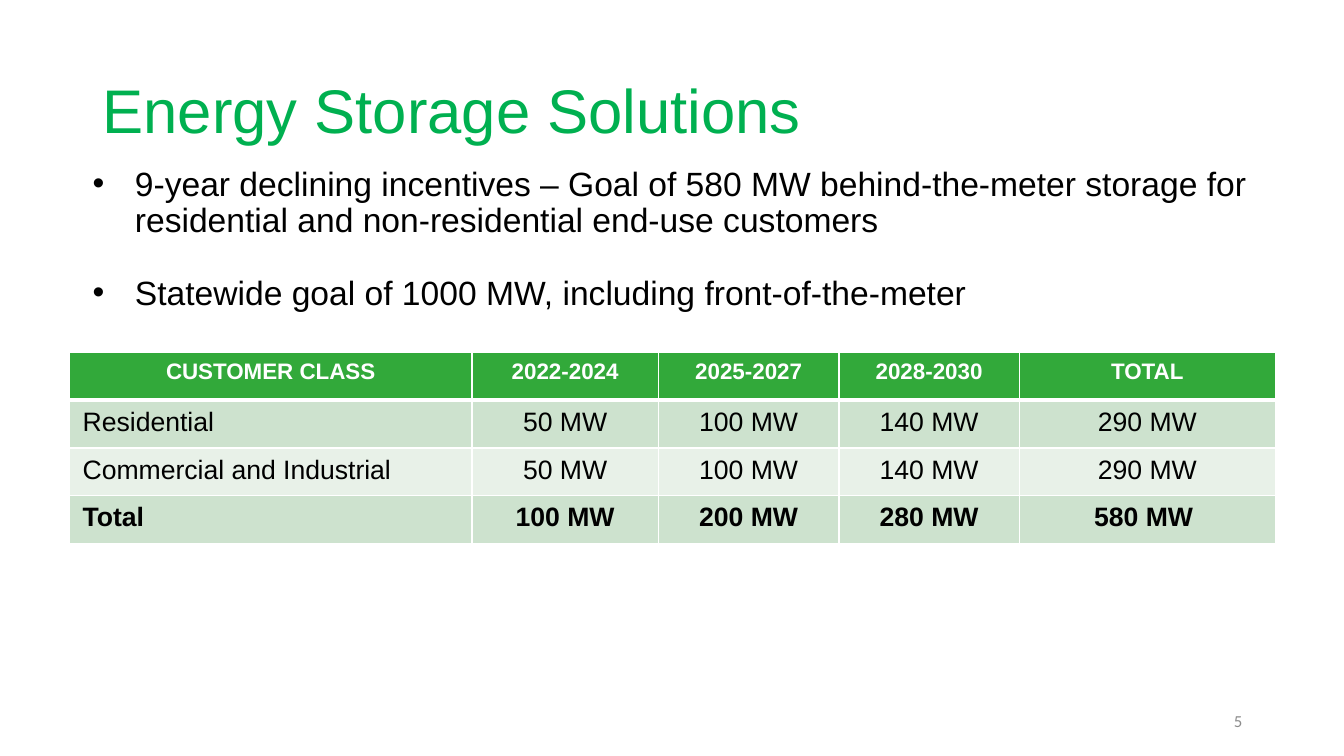
"""Build the Energy Storage Solutions slide with its incentive table."""
from dataclasses import dataclass

from lxml.etree import SubElement
from pptx import Presentation
from pptx.dml.color import RGBColor
from pptx.enum.text import MSO_ANCHOR, PP_ALIGN
from pptx.oxml.ns import qn
from pptx.util import Inches, Pt

GREEN, HEAD, WHITE, BLACK, GRAY = "00B050", "32A93A", "FFFFFF", "000000", "8C8C8C"
DARK, LIGHT = "CDE2CE", "E8F1E8"
THIN, THICK = 1.1, 3.31


@dataclass
class Style:
    size: float
    color: str
    bold: bool = False
    face: str = "Arial"
    align: PP_ALIGN = PP_ALIGN.LEFT


@dataclass
class Block:
    box: tuple[float, float, float, float]
    lines: list[str]
    style: Style
    anchor: MSO_ANCHOR = MSO_ANCHOR.MIDDLE
    bullet: bool = False
    lead: float = 1.0


@dataclass
class Row:
    cells: list[str]
    fill: str
    size: float = 19
    color: str = BLACK
    bold: bool = False
    top: float = THIN
    base: float = THIN


BLOCKS = [
    Block((0.92, 0.4, 11.5, 1.45), ["Energy Storage Solutions"],
          Style(44, GREEN), lead=0.9),
    Block((0.82, 1.61, 12, 2.94),
          ["9-year declining incentives – Goal of 580 MW behind-the-meter storage "
           "for residential and non-residential end-use customers",
           "Statewide goal of 1000 MW, including front-of-the-meter"],
          Style(24, BLACK), MSO_ANCHOR.TOP, bullet=True, lead=0.9),
    Block((9.42, 6.95, 3, 0.4), ["5"],
          Style(12, GRAY, face="Calibri", align=PP_ALIGN.RIGHT)),
]
WIDTHS = [3.99, 1.85, 1.79, 1.79, 2.54]
ROWS = [
    Row(["CUSTOMER CLASS", "2022-2024", "2025-2027", "2028-2030", "TOTAL"],
        HEAD, 16, WHITE, True, base=THICK),
    Row(["Residential", "50 MW", "100 MW", "140 MW", "290 MW"], DARK, top=THICK),
    Row(["Commercial and Industrial", "50 MW", "100 MW", "140 MW", "290 MW"], LIGHT),
    Row(["Total", "100 MW", "200 MW", "280 MW", "580 MW "], DARK, bold=True),
]


def rgb(code: str) -> RGBColor:
    return RGBColor.from_string(code)


def write(para, text: str, style: Style) -> None:
    para.text = text
    para.alignment = style.align
    font = para.font
    font.name, font.size, font.bold = style.face, Pt(style.size), style.bold
    font.color.rgb = rgb(style.color)


def add_bullet(para) -> None:
    props = para._p.get_or_add_pPr()
    props.set("marL", str(Inches(0.42)))
    props.set("indent", str(Inches(-0.42)))
    SubElement(props, qn("a:buFont"), typeface="Arial")
    SubElement(props, qn("a:buChar"), char="•")
    para.space_before, para.space_after = Pt(10), Pt(16)


def add_block(slide, block: Block) -> None:
    frame = slide.shapes.add_textbox(*map(Inches, block.box)).text_frame
    frame.word_wrap = True
    frame.vertical_anchor = block.anchor
    for i, line in enumerate(block.lines):
        para = frame.add_paragraph() if i else frame.paragraphs[0]
        if block.bullet:
            add_bullet(para)
        para.line_spacing = block.lead
        write(para, line, block.style)


def add_edges(cell, row: Row) -> None:
    props = cell._tc.get_or_add_tcPr()
    for side, width in (("L", THIN), ("R", THIN), ("T", row.top), ("B", row.base)):
        edge = SubElement(props, qn(f"a:ln{side}"), w=str(Pt(width)))
        fill = SubElement(edge, qn("a:solidFill"))
        SubElement(fill, qn("a:srgbClr"), val=WHITE)


def add_grid(slide) -> None:
    box = map(Inches, (0.69, 3.5, sum(WIDTHS), 1.89))
    table = slide.shapes.add_table(len(ROWS), len(WIDTHS), *box).table
    for col, width in zip(table.columns, WIDTHS):
        col.width = Inches(width)
    for r, row in enumerate(ROWS):
        for c, text in enumerate(row.cells):
            cell = table.cell(r, c)
            cell.margin_left = cell.margin_right = Inches(0.13)
            cell.margin_top = cell.margin_bottom = Inches(0.07)
            add_edges(cell, row)
            cell.fill.solid()
            cell.fill.fore_color.rgb = rgb(row.fill)
            align = PP_ALIGN.LEFT if r and not c else PP_ALIGN.CENTER
            style = Style(row.size, row.color, row.bold, align=align)
            write(cell.text_frame.paragraphs[0], text, style)


def main() -> None:
    deck = Presentation()
    deck.slide_width, deck.slide_height = Inches(13.33), Inches(7.5)
    slide = deck.slides.add_slide(deck.slide_layouts[6])
    for block in BLOCKS:
        add_block(slide, block)
    add_grid(slide)
    deck.save("out.pptx")


if __name__ == "__main__":
    main()
